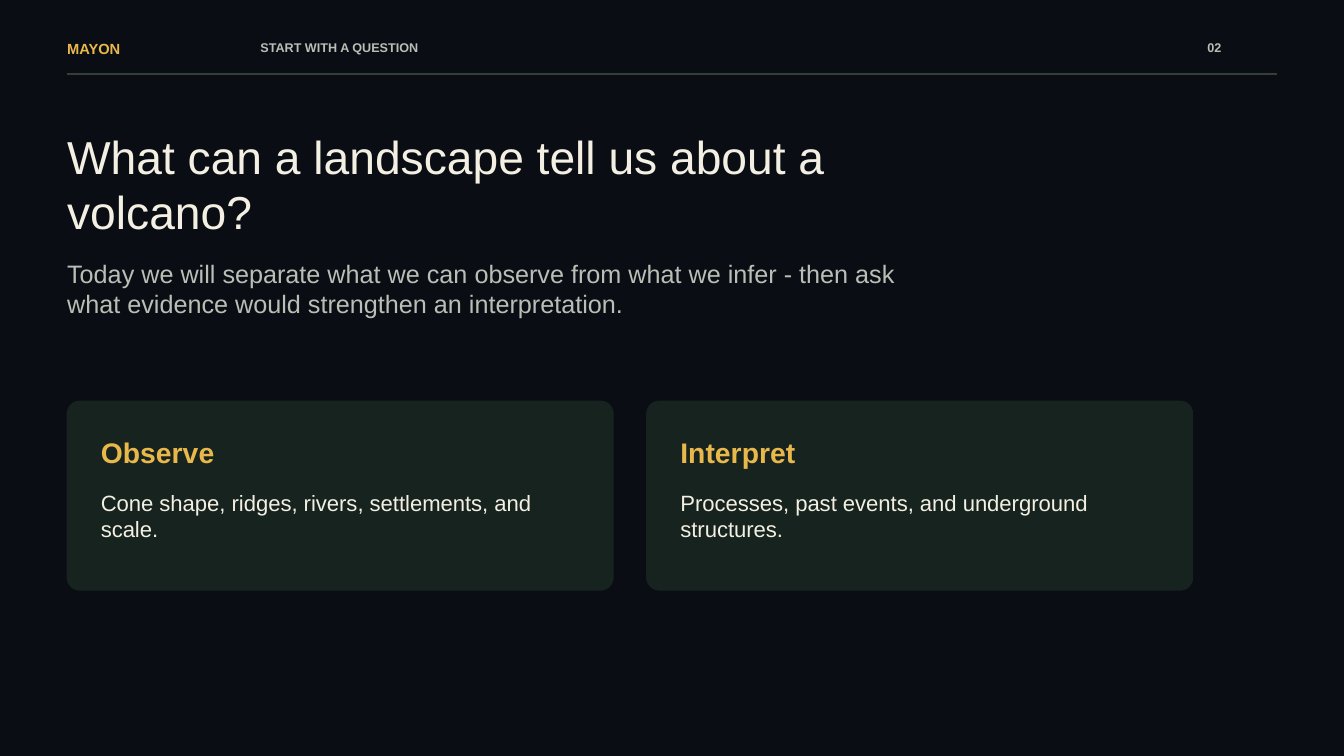
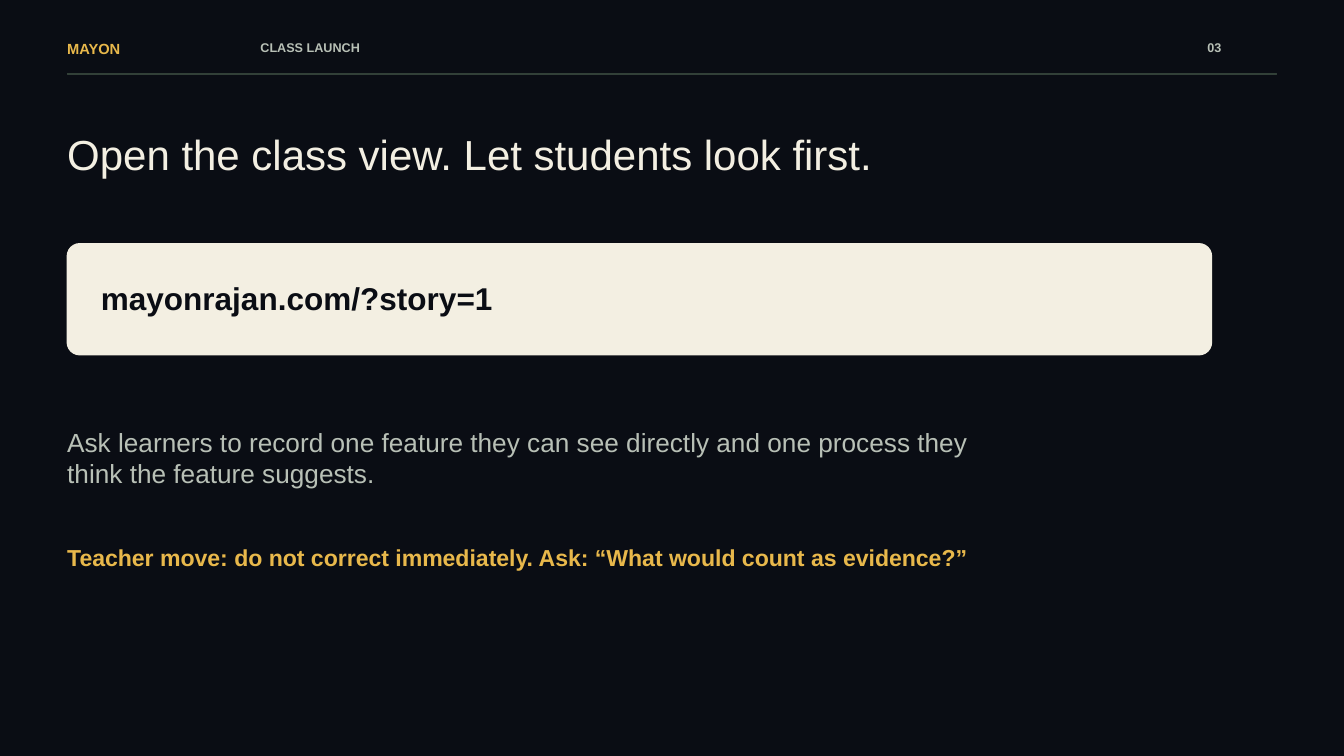
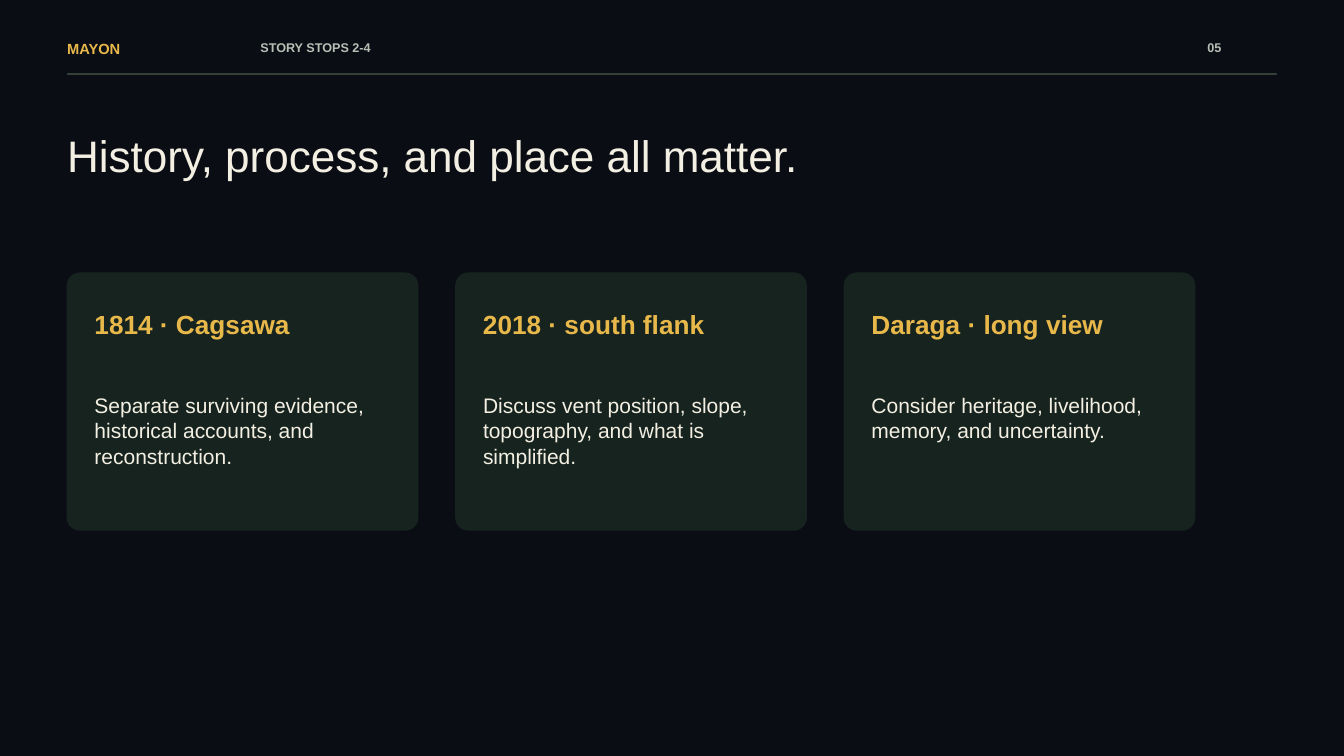
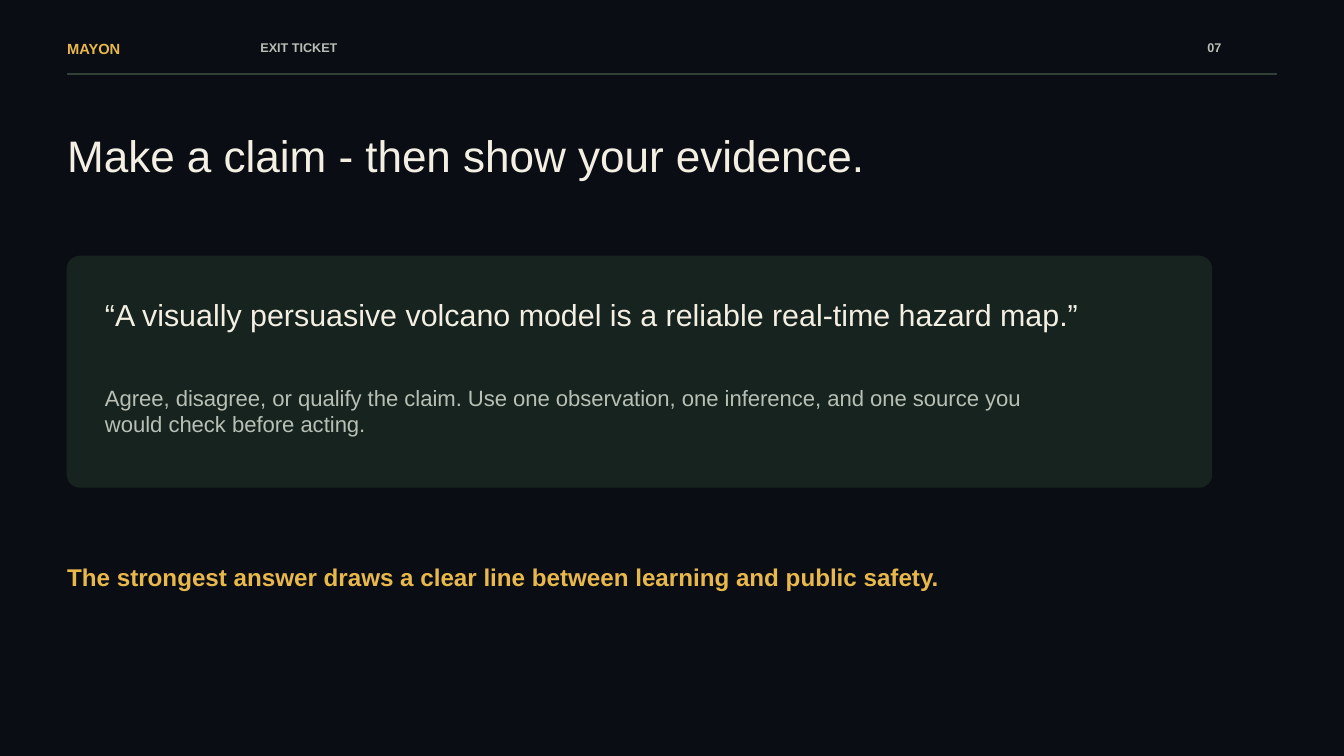
from pptx import Presentation
from pptx import util as u
from pptx.dml.color import RGBColor
from pptx.enum import shapes

PX = 9525
MARGIN = 64
RADIUS = 12
NIGHT, FOREST, RULE = "0A0D14", "17231F", "324038"
GOLD, CREAM, SAGE = "E8B84B", "F3EFE2", "B8C0B6"
color = RGBColor.from_string


def add_text(slide, content, left, top, width, height, size, fill, bold=False):
    box = slide.shapes.add_textbox(*(u.Emu(n * PX) for n in (left, top, width, height)))
    frame = box.text_frame
    frame.word_wrap = True
    frame.margin_left = frame.margin_top = frame.margin_right = frame.margin_bottom = 0
    paragraph = frame.paragraphs[0]
    paragraph.text = content
    paragraph.font.name = "Arial"
    paragraph.font.size = u.Emu(size * PX)
    paragraph.font.bold = bold
    paragraph.font.color.rgb = color(fill)


def add_panel(slide, left, top, width, height, fill, radius=RADIUS):
    kind = shapes.MSO_SHAPE.ROUNDED_RECTANGLE if radius else shapes.MSO_SHAPE.RECTANGLE
    shape = slide.shapes.add_shape(kind, *(u.Emu(n * PX) for n in (left, top, width, height)))
    if radius:
        shape.adjustments[0] = radius / min(width, height)
    shape.shadow.inherit = False
    shape.fill.solid()
    shape.fill.fore_color.rgb = color(fill)
    shape.line.color.rgb = color(fill)
    shape.line.width = 0


presentation = Presentation()
presentation.slide_width = u.Emu(1280 * PX)
presentation.slide_height = u.Emu(720 * PX)
background = presentation.slide_master.background.fill
background.solid()
background.fore_color.rgb = color(NIGHT)

openings = [
    ("START WITH A QUESTION", "02", "What can a landscape tell us about a volcano?", 820, 94, 44),
    ("CLASS LAUNCH", "03", "Open the class view. Let students look first.", 900, 62, 40),
    ("STORY STOPS 2-4", "05", "History, process, and place all matter.", 900, 60, 42),
    ("EXIT TICKET", "07", "Make a claim - then show your evidence.", 900, 60, 42),
]
slides = []
for section, number, title, width, height, size in openings:
    slide = presentation.slides.add_slide(presentation.slide_layouts[6])
    add_text(slide, "MAYON", MARGIN, 38, 160, 20, 14, GOLD, True)
    add_text(slide, section, 248, 38, 700, 20, 12, SAGE, True)
    add_text(slide, number, 1150, 38, 66, 20, 12, SAGE, True)
    add_panel(slide, MARGIN, 70, 1152, 1, RULE, radius=0)
    add_text(slide, title, MARGIN, 122, width, height, size, CREAM)
    slides.append(slide)
question, launch, stops, ticket = slides

add_text(question, "Today we will separate what we can observe from what we infer - then ask "
         "what evidence would strengthen an interpretation.", MARGIN, 246, 830, 72, 24, SAGE)
question_cards = [
    ("Observe", "Cone shape, ridges, rivers, settlements, and scale."),
    ("Interpret", "Processes, past events, and underground structures."),
]
for index, (heading, body) in enumerate(question_cards):
    left = MARGIN + index * 552
    add_panel(question, left, 382, 520, 180, FOREST)
    add_text(question, heading, left + 32, 414, 220, 34, 27, GOLD, True)
    add_text(question, body, left + 32, 466, 420, 56, 21, CREAM)

add_panel(launch, MARGIN, 232, 1090, 106, CREAM)
add_text(launch, "mayonrajan.com/?story=1", 96, 266, 1020, 38, 30, NIGHT, True)
add_text(launch, "Ask learners to record one feature they can see directly and one process they "
         "think the feature suggests.", MARGIN, 406, 900, 65, 25, SAGE)
add_text(launch, "Teacher move: do not correct immediately. Ask: “What would count as evidence?”",
         MARGIN, 518, 950, 42, 22, GOLD, True)

stop_cards = [
    ("1814 · Cagsawa", "Separate surviving evidence, historical accounts, and reconstruction."),
    ("2018 · south flank", "Discuss vent position, slope, topography, and what is simplified."),
    ("Daraga · long view", "Consider heritage, livelihood, memory, and uncertainty."),
]
for index, (heading, body) in enumerate(stop_cards):
    left = MARGIN + index * 370
    add_panel(stops, left, 260, 334, 245, FOREST)
    add_text(stops, heading, left + 26, 294, 270, 54, 25, GOLD, True)
    add_text(stops, body, left + 26, 374, 272, 90, 20, CREAM)

add_panel(ticket, MARGIN, 244, 1090, 220, FOREST)
add_text(ticket, "“A visually persuasive volcano model is a reliable real-time hazard map.”",
         100, 282, 1000, 48, 29, CREAM)
add_text(ticket, "Agree, disagree, or qualify the claim. Use one observation, one inference, and one "
         "source you would check before acting.", 100, 366, 930, 54, 21, SAGE)
add_text(ticket, "The strongest answer draws a clear line between learning and public safety.",
         MARGIN, 536, 1000, 35, 23, GOLD, True)

presentation.save("out.pptx")
